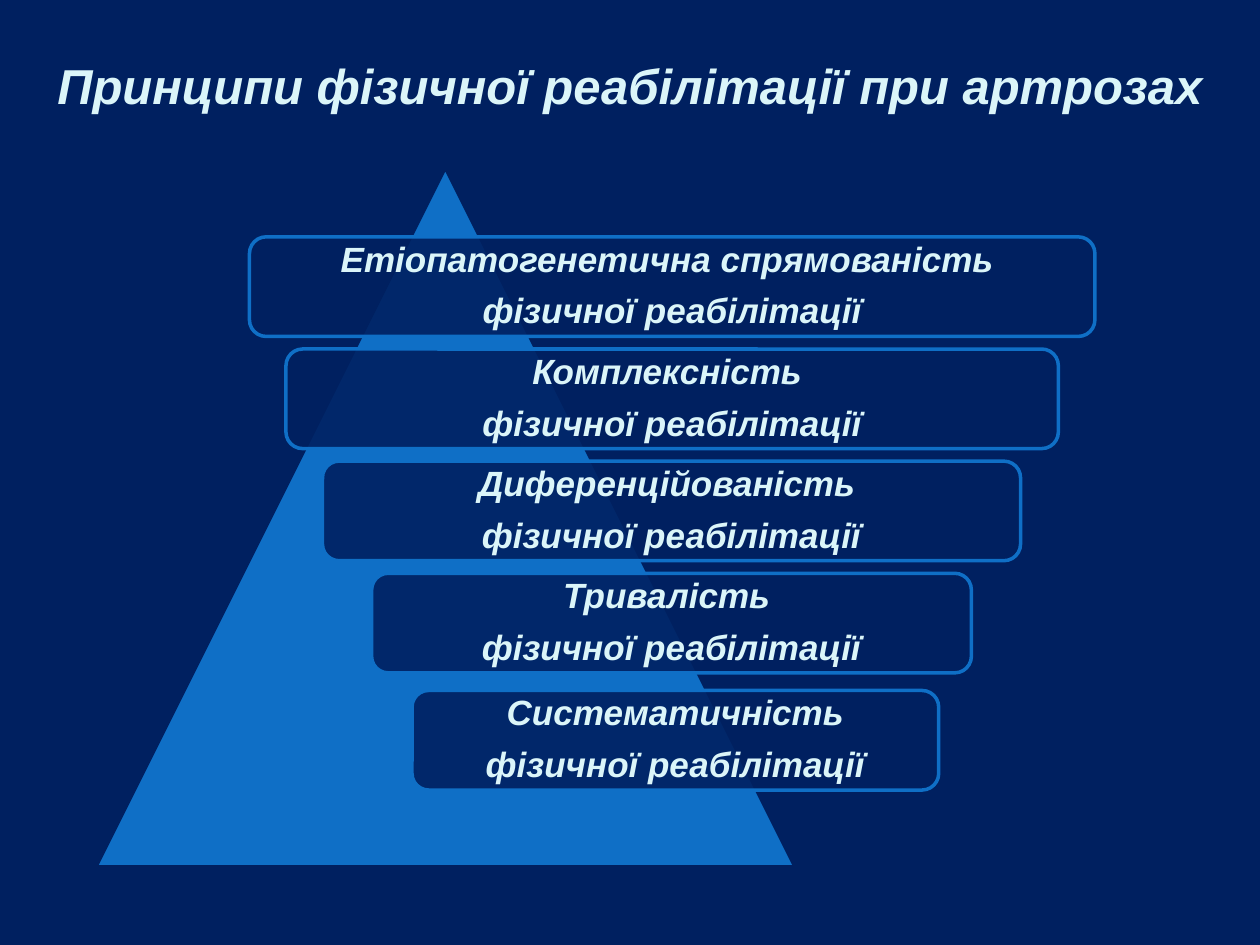
from dataclasses import dataclass

from pptx import Presentation
from pptx import util as u
from pptx.dml.color import RGBColor
from pptx.enum import shapes, text
from pptx.oxml.ns import qn
from lxml import etree

NAVY = RGBColor(0x00, 0x20, 0x60)
BLUE = RGBColor(0x0F, 0x6F, 0xC6)
ICE = RGBColor(0xDB, 0xF5, 0xF9)

WIDTH, HEIGHT = u.Inches(10), u.Inches(7.5)
COLUMN, ROW = WIDTH / 100, HEIGHT / 75
BAR_HEIGHT, BAR_STEP, FIRST_BAR = 7.9, 8.9, 18.8

TITLE_FRAME = dict(word_wrap=True, vertical_anchor=text.MSO_ANCHOR.TOP,
                   auto_size=text.MSO_AUTO_SIZE.NONE)
BAR_FRAME = dict(word_wrap=True, vertical_anchor=text.MSO_ANCHOR.MIDDLE,
                 **{f"margin_{side}": u.Inches(0.12)
                    for side in ("left", "right", "top", "bottom")})
TITLE_PARA = dict(alignment=text.PP_ALIGN.CENTER)
BAR_PARA = dict(alignment=text.PP_ALIGN.CENTER, line_spacing=0.9,
                space_after=u.Pt(8))
FONT = dict(name="Arial", bold=True, italic=True)


@dataclass
class Principle:
    name: str
    left: float
    width: float
    drop: float = 0


PRINCIPLES = [
    Principle("Етіопатогенетична спрямованість ", 19.8, 67.1),
    Principle("Комплексність ", 22.7, 61.3),
    Principle("Диференційованість ", 25.6, 55.4),
    Principle("Тривалість ", 29.5, 47.6),
    Principle("Систематичність", 32.7, 41.8, drop=0.4),
]


def apply(target, values: dict) -> None:
    for name, value in values.items():
        setattr(target, name, value)


def place(left: float, top: float, width: float, height: float) -> dict:
    return dict(left=round(left * COLUMN), top=round(top * ROW),
                width=round(width * COLUMN), height=round(height * ROW))


def write(box, lines: list[str], size: int, frame: dict, para_format: dict) -> None:
    apply(box.text_frame, frame)
    box.text_frame.text = "\n".join(lines)
    for para in box.text_frame.paragraphs:
        apply(para, para_format)
        for span in para.runs:
            apply(span.font, dict(FONT, size=u.Pt(size)))
            span.font.color.rgb = ICE


def add_box(page, kind, position: dict, fill: RGBColor, line: RGBColor):
    box = page.shapes.add_shape(kind, **position)
    box.shadow.inherit = False
    box.fill.solid()
    box.fill.fore_color.rgb = fill
    box.line.color.rgb = line
    box.line.width = u.Pt(2)
    return box


def add_principle(page, index: int, principle: Principle) -> None:
    top = FIRST_BAR + index * BAR_STEP + principle.drop
    position = place(principle.left, top, principle.width, BAR_HEIGHT)
    bar = add_box(page, shapes.MSO_SHAPE.ROUNDED_RECTANGLE, position, NAVY, BLUE)
    color = bar._element.spPr.find(qn("a:solidFill"))[0]
    etree.SubElement(color, qn("a:alpha"), val="90000")
    write(bar, [principle.name, "фізичної реабілітації"], 20, BAR_FRAME, BAR_PARA)


def main() -> None:
    deck = Presentation()
    apply(deck, dict(slide_width=WIDTH, slide_height=HEIGHT))
    page = deck.slides.add_slide(deck.slide_layouts[5])
    page.background.fill.solid()
    page.background.fill.fore_color.rgb = NAVY

    title = page.shapes.title
    apply(title, place(3.1, 3.9, 93.8, 8.8))
    write(title, ["Принципи фізичної реабілітації при артрозах"], 28,
          TITLE_FRAME, TITLE_PARA)

    add_box(page, shapes.MSO_SHAPE.ISOSCELES_TRIANGLE,
            place(7.6, 13.3, 55.5, 55.5), BLUE, NAVY)
    for index, principle in enumerate(PRINCIPLES):
        add_principle(page, index, principle)
    deck.save("out.pptx")


if __name__ == "__main__":
    main()
